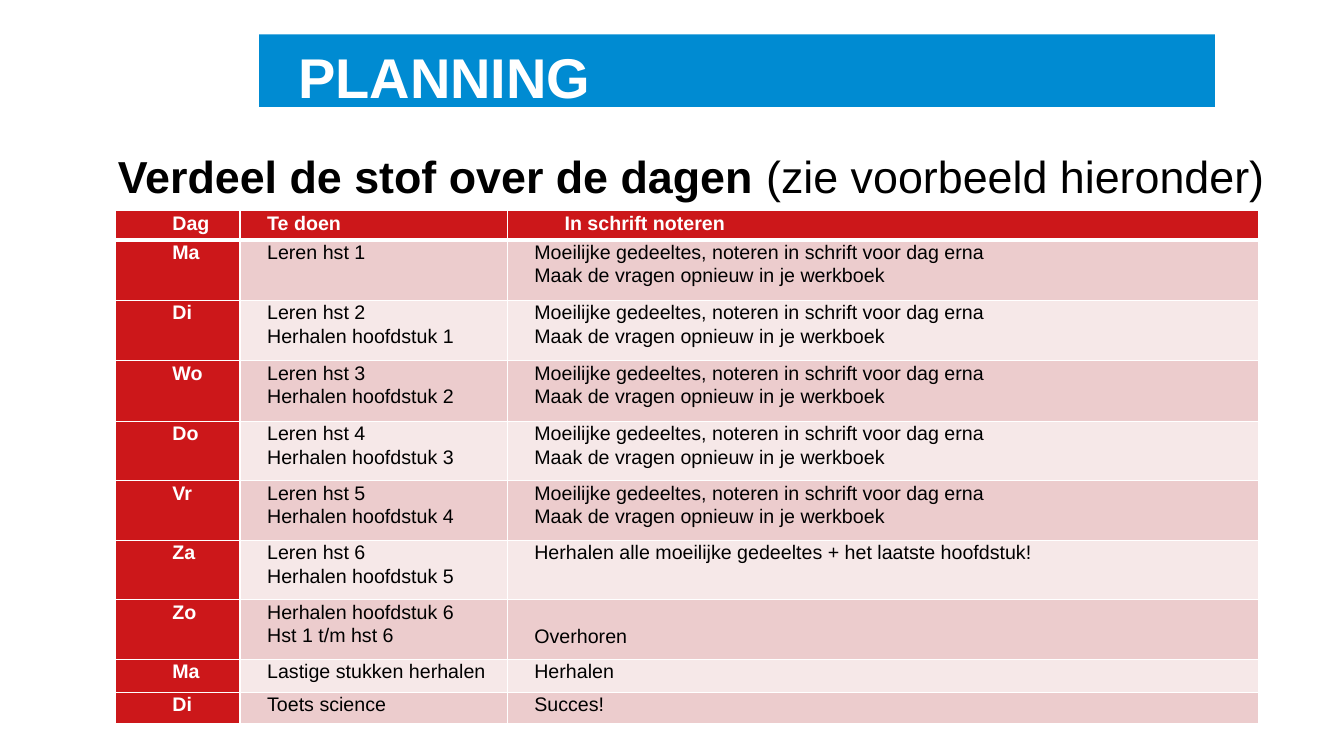
from dataclasses import dataclass

from lxml.etree import SubElement
from pptx import Presentation
from pptx.dml.color import RGBColor
from pptx.enum.shapes import MSO_SHAPE as Shape
from pptx.enum.text import MSO_ANCHOR as Anchor, MSO_AUTO_SIZE as AutoSize, PP_ALIGN as Align
from pptx.oxml.ns import qn
from pptx.util import Inches, Pt

COLORS = {
    "blue": "008BD2",
    "red": "CC171A",
    "pink": "ECCCCD",
    "pale": "F6E8E8",
    "white": "FFFFFF",
    "black": "000000",
}
DAY_INDENT = 0.5
TASK_INDENT = 0.2
LINE_SPACING = 1.07
COLUMN_WIDTHS = (1.24, 2.65, 7.45)
HEADER_HEIGHT = 0.29


@dataclass(frozen=True)
class DayPlan:
    day: str
    tasks: tuple[str, ...]
    entries: tuple[str, ...]
    height: float
    entry_inset: float = 0


HARD_PARTS = (
    "Moeilijke gedeeltes, noteren in schrift voor dag erna",
    "Maak de vragen opnieuw in je werkboek",
)
PLANS = (
    DayPlan("Ma", ("Leren hst 1",), HARD_PARTS, 0.6),
    DayPlan("Di", ("Leren hst 2", "Herhalen hoofdstuk 1"), HARD_PARTS, 0.6),
    DayPlan("Wo", ("Leren hst 3", "Herhalen hoofdstuk 2"), HARD_PARTS, 0.6),
    DayPlan("Do", ("Leren hst 4", "Herhalen hoofdstuk 3"), HARD_PARTS, 0.59),
    DayPlan("Vr", ("Leren hst 5", "Herhalen hoofdstuk 4"), HARD_PARTS, 0.59),
    DayPlan("Za", ("Leren hst 6", "Herhalen hoofdstuk 5"),
            ("Herhalen alle moeilijke gedeeltes + het laatste hoofdstuk!",), 0.59),
    DayPlan("Zo", ("Herhalen hoofdstuk 6", "Hst 1 t/m hst 6"), ("Overhoren",), 0.59, 0.24),
    DayPlan("Ma", ("Lastige stukken herhalen",), ("Herhalen",), 0.33),
    DayPlan("Di", ("Toets science",), ("Succes!",), 0.31),
)


def rgb(name: str) -> RGBColor:
    return RGBColor.from_string(COLORS[name])


def add_span(para, text: str, *, size: float, color: str, bold: bool = False) -> None:
    span = para.add_run()
    span.text = text
    span.font.name = "Arial"
    span.font.size = Pt(size)
    span.font.bold = bold
    span.font.color.rgb = rgb(color)


def set_indent(para, *, left: float = 0, first: float = 0) -> None:
    properties = para._p.get_or_add_pPr()
    properties.set("marL", str(Inches(left)))
    properties.set("indent", str(Inches(first)))


def set_borders(cell, *, top: float = 1, bottom: float = 1) -> None:
    properties = cell._tc.get_or_add_tcPr()
    for side, width in (("L", 1), ("R", 1), ("T", top), ("B", bottom)):
        line = SubElement(properties, qn(f"a:ln{side}"), w=str(Pt(width)))
        fill = SubElement(line, qn("a:solidFill"))
        SubElement(fill, qn("a:srgbClr"), val=COLORS["white"])


def fill_cell(cell, lines: tuple[str, ...], *, fill: str, indent: float, strong: bool = False,
              inset_top: float = 0, border_top: float = 1, border_bottom: float = 1) -> None:
    set_borders(cell, top=border_top, bottom=border_bottom)
    cell.fill.solid()
    cell.fill.fore_color.rgb = rgb(fill)
    cell.margin_left = cell.margin_right = Inches(0.07)
    cell.margin_top, cell.margin_bottom = Inches(inset_top), 0
    frame = cell.text_frame
    for number, line in enumerate(lines):
        para = frame.add_paragraph() if number else frame.paragraphs[0]
        set_indent(para, left=indent)
        para.line_spacing = LINE_SPACING
        add_span(para, line, size=14, color="white" if strong else "black", bold=strong)


def add_heading(page) -> None:
    box = page.shapes.add_textbox(Inches(1.07), Inches(1.39), Inches(11.83), Inches(0.64))
    frame = box.text_frame
    frame.word_wrap = True
    frame.auto_size = AutoSize.SHAPE_TO_FIT_TEXT
    frame.margin_top = Inches(0.09)
    para = frame.paragraphs[0]
    add_span(para, "Verdeel de stof over de dagen ", size=32, color="black", bold=True)
    add_span(para, "(zie voorbeeld hieronder)", size=32, color="black")


def add_planning(page) -> None:
    heights = (HEADER_HEIGHT, *(plan.height for plan in PLANS))
    table = page.shapes.add_table(
        len(heights), len(COLUMN_WIDTHS), Inches(1.14), Inches(2.09),
        Inches(sum(COLUMN_WIDTHS)), Inches(sum(heights))).table
    for column, width in zip(table.columns, COLUMN_WIDTHS):
        column.width = Inches(width)
    for row, height in zip(table.rows, heights):
        row.height = Inches(height)

    headers = (("Dag", DAY_INDENT), ("Te doen", TASK_INDENT), ("In schrift noteren", DAY_INDENT))
    for column, (title, indent) in enumerate(headers):
        fill_cell(table.cell(0, column), (title,), fill="red", indent=indent,
                  strong=True, border_bottom=3)

    for row, plan in enumerate(PLANS, start=1):
        band = "pink" if row % 2 else "pale"
        border_top = 3 if row == 1 else 1
        fill_cell(table.cell(row, 0), (plan.day,), fill="red", indent=DAY_INDENT,
                  strong=True, border_top=border_top)
        fill_cell(table.cell(row, 1), plan.tasks, fill=band, indent=TASK_INDENT,
                  border_top=border_top)
        fill_cell(table.cell(row, 2), plan.entries, fill=band, indent=TASK_INDENT,
                  inset_top=plan.entry_inset, border_top=border_top)


def add_banner(page) -> None:
    banner = page.shapes.add_shape(
        Shape.RECTANGLE, Inches(2.57), Inches(0.34), Inches(9.48), Inches(0.72))
    banner.shadow.inherit = False
    banner.fill.solid()
    banner.fill.fore_color.rgb = rgb("blue")
    banner.line.fill.background()
    frame = banner.text_frame
    frame.word_wrap = True
    frame.vertical_anchor = Anchor.MIDDLE
    frame.margin_top, frame.margin_bottom = Inches(0.1), 0
    para = frame.paragraphs[0]
    para.alignment = Align.LEFT
    set_indent(para, first=0.29)
    add_span(para, "PLANNING", size=40, color="white", bold=True)


def main() -> None:
    deck = Presentation()
    deck.slide_width, deck.slide_height = Inches(13.33), Inches(7.5)
    page = deck.slides.add_slide(deck.slide_layouts[6])
    add_heading(page)
    add_planning(page)
    add_banner(page)
    deck.save("out.pptx")


if __name__ == "__main__":
    main()
